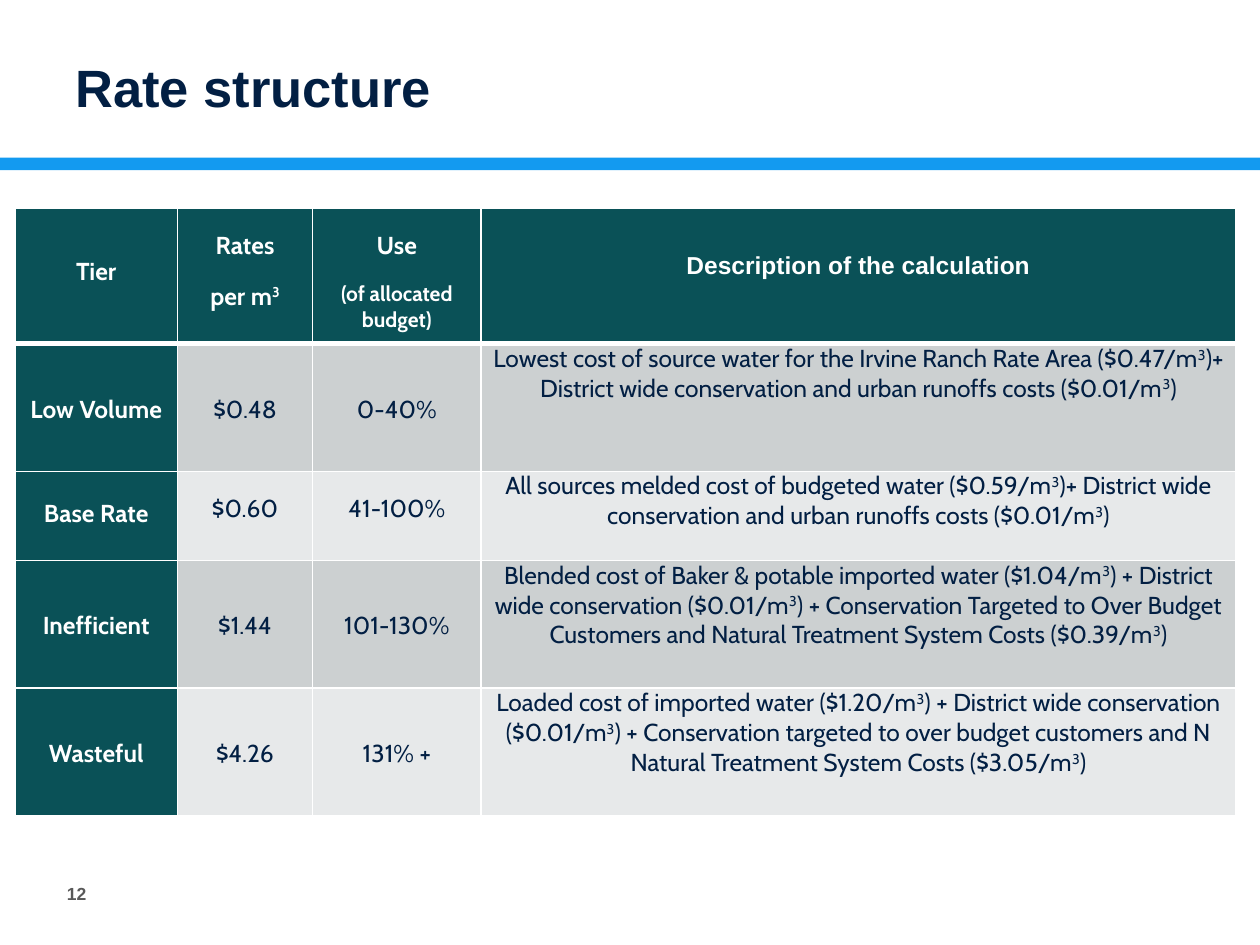
"""Build the rate structure slide with its table of water price tiers."""
from dataclasses import dataclass

import lxml.etree
import pptx
import pptx.dml.color
import pptx.enum.shapes
import pptx.enum.text
import pptx.oxml.ns
import pptx.slide
import pptx.table
import pptx.text.text
import pptx.util

Cm = pptx.util.Cm
Pt = pptx.util.Pt
Align = pptx.enum.text.PP_ALIGN
Anchor = pptx.enum.text.MSO_ANCHOR
qn = pptx.oxml.ns.qn

NAVY, TEAL, WHITE = "021F43", "0A5157", "FFFFFF"
BLUE, GREY = "139AF0", "595959"
BANDS = ("CCD0D1", "E7E9EA")
COLUMN_WIDTHS = (3.28, 2.72, 3.4, 15.21)
HEADER_HEIGHT = 2.74
THIN, THICK = 1, 3


@dataclass(frozen=True)
class Heading:
    lines: tuple[str, ...]
    top: float
    font: str = "Cabin"
    detail_size: float = 14


@dataclass(frozen=True)
class Tier:
    name: str
    rate: str
    use: str
    description: str
    height: float = 2.57
    name_top: float = 1.02
    value_top: float = 1.02


HEADINGS = (
    Heading(("Tier",), 0.98),
    Heading(("Rates", "per m³"), 0.46),
    Heading(("Use", "(of allocated budget)"), 0.46, detail_size=12),
    Heading(("Description of the calculation",), 0.9, font="Arial"),
)
TIERS = (
    Tier("Low Volume", "$0.48", "0-40%",
         "Lowest cost of source water for the Irvine Ranch Rate Area ($0.47/m³)+ "
         "District wide conservation and urban runoffs costs ($0.01/m³)"),
    Tier("Base Rate", "$0.60", "41-100%",
         "All sources melded cost of budgeted water ($0.59/m³)+ "
         "District wide conservation and urban runoffs costs ($0.01/m³)",
         height=1.8, name_top=0.55, value_top=0.46),
    Tier("Inefficient", "$1.44", "101-130%",
         "Blended cost of Baker & potable imported water ($1.04/m³) + "
         "District wide conservation ($0.01/m³) + Conservation Targeted to Over Budget "
         "Customers and Natural Treatment System Costs ($0.39/m³)"),
    Tier("Wasteful", "$4.26", "131% +",
         "Loaded cost of imported water ($1.20/m³) + "
         "District wide conservation ($0.01/m³) + Conservation targeted to over budget "
         "customers and N Natural Treatment System Costs ($3.05/m³)"),
)


def color(value: str) -> pptx.dml.color.RGBColor:
    """Turn a hex string into a colour."""
    return pptx.dml.color.RGBColor.from_string(value)


def write(frame: pptx.text.text.TextFrame, text: str, *, size: float = 14,
          font: str = "Cabin", fill: str = NAVY, bold: bool = False,
          align: Align = Align.CENTER, first: bool = True) -> None:
    """Write one paragraph, raising each cubic sign as a superscript 3."""
    paragraph = frame.paragraphs[0] if first else frame.add_paragraph()
    paragraph.alignment = align
    paragraph.space_before = Pt(0 if first else 6)
    paragraph.space_after = Pt(6 if font == "Cabin" else 0)
    for index, piece in enumerate(text.split("³")):
        for content, raised in (("3" if index else "", True), (piece, False)):
            if not content:
                continue
            run = paragraph.add_run()
            run.text = content
            run.font.name = font
            run.font.size = Pt(size)
            run.font.bold = bold
            run.font.color.rgb = color(fill)
            if raised:
                run._r.get_or_add_rPr().set("baseline", "30000")


def add_label(slide: pptx.slide.Slide, text: str, left: float, top: float,
              width: float, height: float, **text_format) -> None:
    """Add a text box centred vertically."""
    frame = slide.shapes.add_textbox(Cm(left), Cm(top), Cm(width), Cm(height)).text_frame
    frame.word_wrap = True
    frame.vertical_anchor = Anchor.MIDDLE
    write(frame, text, font="Arial", bold=True, **text_format)


def style_cell(cell: pptx.table._Cell, fill: str, top: float = 0,
               upper: float = THIN, lower: float = THIN) -> None:
    """Set the fill, margins and white borders of a cell."""
    cell.fill.solid()
    cell.fill.fore_color.rgb = color(fill)
    cell.margin_left = cell.margin_right = Cm(0.18)
    cell.margin_top, cell.margin_bottom = Cm(top), Cm(0)
    cell.vertical_anchor = Anchor.TOP
    properties = cell._tc.get_or_add_tcPr()
    borders = {"a:lnL": THIN, "a:lnR": THIN, "a:lnT": upper, "a:lnB": lower}
    for position, (tag, width) in enumerate(borders.items()):
        line = lxml.etree.Element(qn(tag), w=str(Pt(width)))
        solid = lxml.etree.SubElement(line, qn("a:solidFill"))
        lxml.etree.SubElement(solid, qn("a:srgbClr"), val=WHITE)
        properties.insert(position, line)


def add_rate_table(slide: pptx.slide.Slide) -> None:
    """Add the table with its headings and one row for each tier."""
    heights = (HEADER_HEIGHT, *(tier.height for tier in TIERS))
    table = slide.shapes.add_table(
        len(heights), len(COLUMN_WIDTHS), Cm(0.3), Cm(4.19),
        Cm(sum(COLUMN_WIDTHS)), Cm(sum(heights))).table
    for column, width in zip(table.columns, COLUMN_WIDTHS):
        column.width = Cm(width)
    for row, height in zip(table.rows, heights):
        row.height = Cm(height)

    for index, heading in enumerate(HEADINGS):
        cell = table.cell(0, index)
        style_cell(cell, TEAL, heading.top, lower=THICK)
        for number, line in enumerate(heading.lines):
            write(cell.text_frame, line, font=heading.font, fill=WHITE, bold=True,
                  size=heading.detail_size if number else 14, first=number == 0)

    for index, tier in enumerate(TIERS):
        band = BANDS[index % 2]
        contents = (
            (tier.name, TEAL, tier.name_top),
            (tier.rate, band, tier.value_top),
            (tier.use, band, tier.value_top),
            (tier.description, band, 0),
        )
        for column, (text, fill, top) in enumerate(contents):
            cell = table.cell(index + 1, column)
            style_cell(cell, fill, top, upper=THIN if index else THICK)
            write(cell.text_frame, text, bold=column == 0,
                  fill=NAVY if column else WHITE)


def main() -> None:
    """Build and save the presentation."""
    presentation = pptx.Presentation()
    presentation.slide_width, presentation.slide_height = Cm(25.4), Cm(19.05)
    slide = presentation.slides.add_slide(presentation.slide_layouts[6])
    bar = slide.shapes.add_shape(
        pptx.enum.shapes.MSO_SHAPE.RECTANGLE, Cm(0), Cm(3.18), Cm(25.4), Cm(0.25))
    bar.shadow.inherit = False
    bar.fill.solid()
    bar.fill.fore_color.rgb = color(BLUE)
    bar.line.fill.background()
    add_label(slide, "Rate structure", 1.27, 0.76, 22.86, 1.98,
              size=30, align=Align.LEFT)
    add_rate_table(slide)
    add_label(slide, "12", 0.64, 17.5, 1.35, 1.02,
              size=10, fill=GREY, align=Align.RIGHT)
    presentation.save("out.pptx")


if __name__ == "__main__":
    main()
